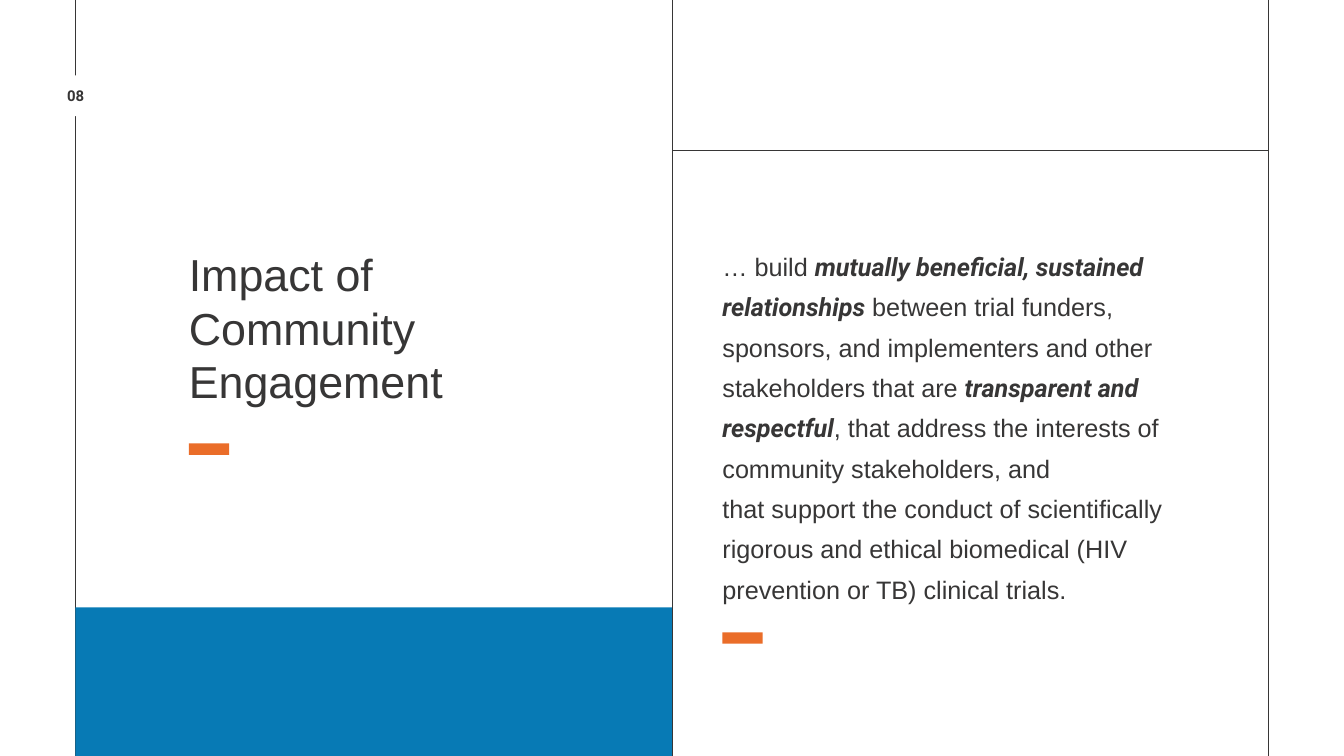
"""Build the slide on the impact of community engagement."""
import pptx
import pptx.dml.color
import pptx.enum.shapes
import pptx.enum.text
import pptx.oxml.ns
import pptx.util
from lxml import etree

Inches = pptx.util.Inches
Pt = pptx.util.Pt
RGBColor = pptx.dml.color.RGBColor
Align = pptx.enum.text.PP_ALIGN

DARK = RGBColor(0x37, 0x36, 0x36)
WHITE = RGBColor(0xFF, 0xFF, 0xFF)
ORANGE = RGBColor(0xEA, 0x6D, 0x29)
BLUE = RGBColor(0x07, 0x7A, 0xB5)


def place(shape, left, top, width, height):
    shape.left, shape.top = Inches(left), Inches(top)
    shape.width, shape.height = Inches(width), Inches(height)
    frame = shape.text_frame
    frame.margin_left = frame.margin_right = 0
    frame.margin_top = frame.margin_bottom = 0
    frame.word_wrap = True
    frame.auto_size = pptx.enum.text.MSO_AUTO_SIZE.NONE
    frame.vertical_anchor = pptx.enum.text.MSO_ANCHOR.TOP
    return frame


def write(para, runs, size, space, align=Align.LEFT):
    para.alignment = align
    para.line_spacing = Pt(space)
    para.space_before = Pt(0)
    for text, strong, slant in runs:
        run = para.add_run()
        run.text = text
        run.font.name = "Roboto" if strong else "Arial"
        run.font.size = Pt(size)
        run.font.bold = strong
        run.font.italic = slant
        run.font.color.rgb = DARK


deck = pptx.Presentation()
deck.slide_width = Inches(20)
deck.slide_height = Inches(11.25)
slide = deck.slides.add_slide(deck.slide_layouts[1])
shapes = slide.shapes

lines = [
    (1.12, -0.39, 1.12, 11.63),
    (10, -0.39, 10, 11.63),
    (18.88, -0.39, 18.88, 11.63),
    (10, 2.23, 18.88, 2.23),
]
for ends in lines:
    line = shapes.add_connector(
        pptx.enum.shapes.MSO_CONNECTOR.STRAIGHT, *map(Inches, ends)
    )
    line.line.color.rgb = DARK
    line.line.width = Pt(0.75)
    etree.SubElement(line._element.spPr, pptx.oxml.ns.qn("a:effectLst"))

blocks = [
    (0.69, 1.12, 0.86, 0.61, WHITE),
    (1.12, 9.04, 8.88, 2.21, BLUE),
    (2.81, 6.6, 0.6, 0.17, ORANGE),
    (10.75, 9.41, 0.6, 0.17, ORANGE),
]
for *box, color in blocks:
    block = shapes.add_shape(
        pptx.enum.shapes.MSO_SHAPE.RECTANGLE, *map(Inches, box)
    )
    block.shadow.inherit = False
    block.fill.solid()
    block.fill.fore_color.rgb = color
    block.line.fill.background()

number = place(shapes.add_textbox(0, 0, 0, 0), 0.76, 1.31, 0.73, 0.25)
write(number.paragraphs[0], [("08", True, False)], 16, 17.6, Align.CENTER)

title = place(shapes.title, 2.81, 3.67, 5.51, 2.36)
write(
    title.paragraphs[0],
    [("Impact of Community Engagement", False, False)],
    48,
    57.6,
)

body = place(slide.placeholders[1], 10.75, 3.59, 7.54, 5.9)
paras = [
    [
        ("… build ", False, False),
        ("mutually beneficial, sustained relationships", True, True),
        (
            " between trial funders, sponsors, and implementers and other "
            "stakeholders that are ",
            False,
            False,
        ),
        ("transparent and respectful", True, True),
        (
            ", that address the interests of community stakeholders, and",
            False,
            False,
        ),
    ],
    [
        (
            "that support the conduct of scientifically rigorous and ethical "
            "biomedical (HIV prevention or TB) clinical trials.",
            False,
            False,
        )
    ],
]
for index, runs in enumerate(paras):
    para = body.add_paragraph() if index else body.paragraphs[0]
    props = para._p.get_or_add_pPr()
    props.set("marL", "0")
    props.set("indent", "0")
    etree.SubElement(props, pptx.oxml.ns.qn("a:buNone"))
    write(para, runs, 27, 43.2)

deck.save("out.pptx")
